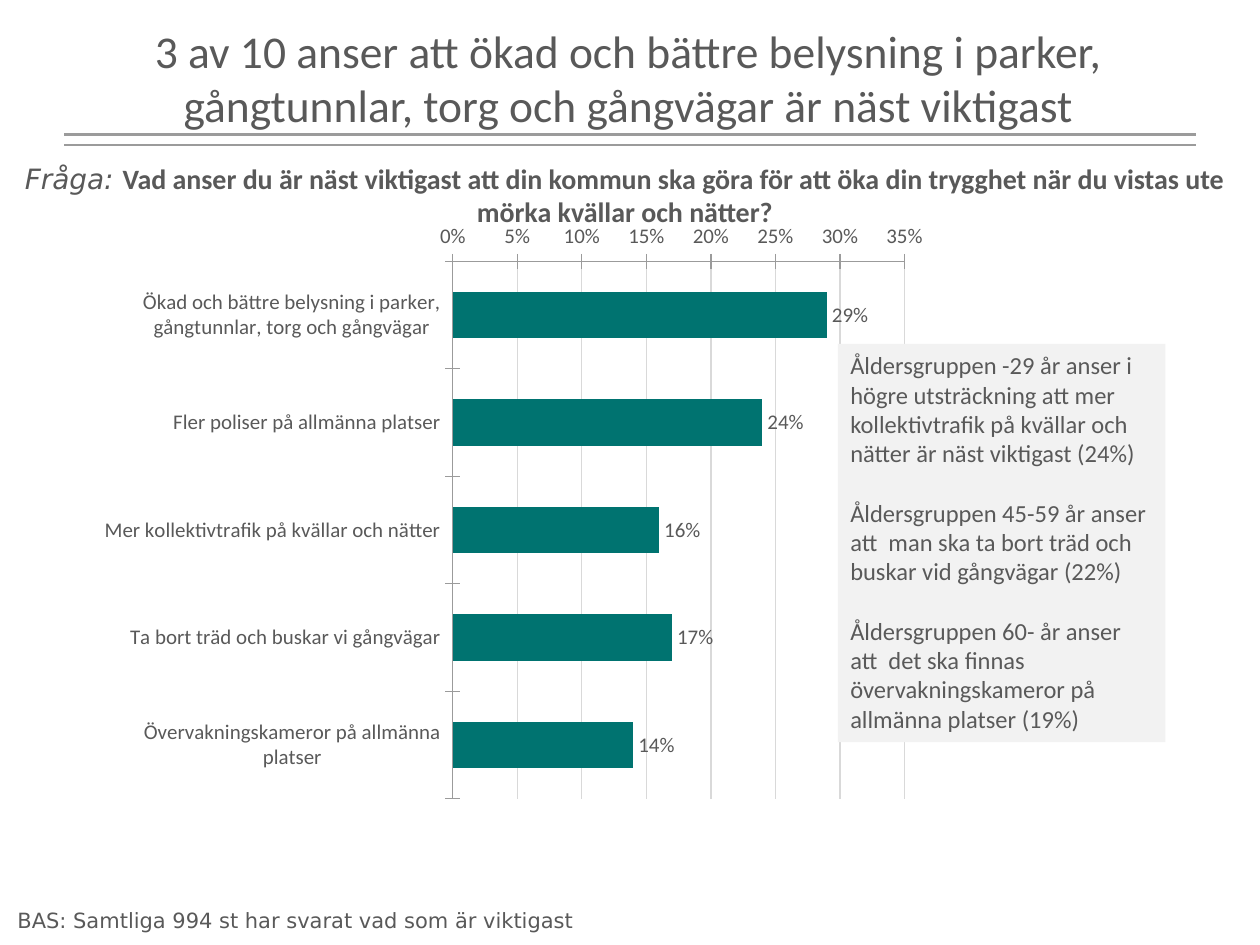
from lxml import etree
from pptx import Presentation
from pptx.chart.data import CategoryChartData
from pptx.dml.color import RGBColor
from pptx.enum.chart import XL_AXIS_CROSSES, XL_CHART_TYPE, XL_LABEL_POSITION, XL_TICK_MARK
from pptx.enum.shapes import MSO_CONNECTOR, MSO_SHAPE
from pptx.enum.text import MSO_ANCHOR, PP_ALIGN
from pptx.oxml import parse_xml
from pptx.oxml.ns import nsdecls, qn
from pptx.util import Inches, Pt

BAR = XL_CHART_TYPE.BAR_CLUSTERED
END = XL_LABEL_POSITION.OUTSIDE_END
CROSS = XL_TICK_MARK.CROSS
LAST = XL_AXIS_CROSSES.MAXIMUM
MID, LEFT = PP_ALIGN.CENTER, PP_ALIGN.LEFT
TOP = MSO_ANCHOR.TOP
INK, RULE, GRID, TEAL, PALE = "595959", "9B9B9B", "D9D9D9", "007370", "F2F2F2"
SANS, WIDE = "Calibri", "DejaVu Sans"

TITLE = ("3 av 10 anser att ökad och bättre belysning i parker, "
         "gångtunnlar, torg och gångvägar är näst viktigast")
ASK = "Fråga: "
QUERY = ("Vad anser du är näst viktigast att din kommun ska göra för att öka "
         "din trygghet när du vistas ute mörka kvällar och nätter?")
BASE = "BAS: Samtliga 994 st har svarat vad som är viktigast"
NOTES = [
    "Åldersgruppen -29 år anser i högre utsträckning att mer kollektivtrafik "
    "på kvällar och nätter är näst viktigast (24%)",
    "Åldersgruppen 45-59 år anser att  man ska ta bort träd och buskar vid gångvägar (22%)",
    "Åldersgruppen 60- år anser att  det ska finnas övervakningskameror "
    "på allmänna platser (19%)",
]
BARS = [
    ("Ökad och bättre belysning i parker, gångtunnlar, torg och gångvägar", 0.29),
    ("Fler poliser på allmänna platser", 0.24),
    ("Mer kollektivtrafik på kvällar och nätter", 0.16),
    ("Ta bort träd och buskar vi gångvägar", 0.17),
    ("Övervakningskameror på allmänna platser", 0.14),
]
PLOT = {"x": 0.33, "y": 0.05, "w": 0.43, "h": 0.84}


def tint(hue):
    """Turn a hex string into a colour."""
    return RGBColor.from_string(hue)


def box(*sides):
    """Turn inches into lengths."""
    return [Inches(side) for side in sides]


def style(font, **form):
    """Set the font attributes given in form."""
    font.color.rgb = tint(INK)
    for key, val in form.items():
        setattr(font, key, val)


def write(shape, paras, align, gap=0):
    """Fill a shape with paragraphs made of (text, format) runs."""
    frame = shape.text_frame
    frame.word_wrap, frame.vertical_anchor = True, TOP
    for i, runs in enumerate(paras):
        para = frame.add_paragraph() if i else frame.paragraphs[0]
        para.alignment = align
        if i:
            para.space_before = Pt(gap)
        for text, form in runs:
            run = para.add_run()
            run.text = text
            style(run.font, **form)


def stroke(line, hue, width):
    """Colour and size a line."""
    line.color.rgb = tint(hue)
    line.width = Pt(width)


def draw_rule(slide, y):
    """Draw one line across the slide under the title."""
    rule = slide.shapes.add_connector(MSO_CONNECTOR.STRAIGHT, *box(0.51, y, 9.49, y))
    stroke(rule.line, RULE, 1.5)
    etree.SubElement(rule._element.spPr, qn("a:effectLst"))


def draw_chart(slide):
    """Add the bar chart of answers."""
    data = CategoryChartData(number_format="0%")
    data.categories = [name for name, _ in BARS]
    data.add_series("Series 1", [val for _, val in BARS])
    chart = slide.shapes.add_chart(BAR, *box(0.83, 1.78, 8.35, 5.12), data).chart
    chart.has_legend = chart.has_title = False
    style(chart.font, name=SANS, size=Pt(18))

    cats, vals = chart.category_axis, chart.value_axis
    for axis in (cats, vals):
        axis.major_tick_mark = CROSS
        style(axis.tick_labels.font, name=SANS, size=Pt(12))
        stroke(axis.format.line, RULE, 0.75)
    cats.reverse_order, cats.crosses = True, LAST
    vals.minimum_scale, vals.maximum_scale, vals.major_unit = 0, 0.35, 0.05
    vals.tick_labels.number_format = "0%"
    vals.tick_labels.number_format_is_linked = False
    stroke(vals.major_gridlines.format.line, GRID, 0.75)

    plot = chart.plots[0]
    plot.gap_width, plot.vary_by_categories = 130, False
    fill = plot.series[0].format.fill
    fill.solid()
    fill.fore_color.rgb = tint(TEAL)
    plot.has_data_labels = True
    tags = plot.data_labels
    form = {"show_value": True, "position": END, "number_format": "0%",
            "number_format_is_linked": False}
    for key, val in form.items():
        setattr(tags, key, val)
    style(tags.font, name=SANS, size=Pt(12))

    modes = '<c:xMode val="edge"/><c:yMode val="edge"/>'
    spots = "".join(f'<c:{key} val="{val}"/>' for key, val in PLOT.items())
    area = chart._chartSpace.chart.plotArea
    for old in area.findall(qn("c:layout")):
        area.remove(old)
    area.insert(0, parse_xml(
        f'<c:layout {nsdecls("c")}><c:manualLayout><c:layoutTarget val="inner"/>'
        f"{modes}{spots}</c:manualLayout></c:layout>"))


def main():
    """Build the slide and save it."""
    deck = Presentation()
    deck.slide_width, deck.slide_height = box(10, 7.5)
    slide = deck.slides.add_slide(deck.slide_layouts[5])
    shapes = slide.shapes

    for y in (1.07, 1.15):
        draw_rule(slide, y)
    title = shapes.title
    title.left, title.top, title.width, title.height = box(0.49, 0.13, 9, 1.25)
    write(title, [[(TITLE, {"name": SANS, "size": Pt(26)})]], MID)

    query = shapes.add_textbox(*box(-0.04, 1.23, 10, 0.64))
    write(query, [[(ASK, {"name": WIDE, "size": Pt(16), "italic": True}),
                   (QUERY, {"name": SANS, "size": Pt(16), "bold": True})]], MID)
    base = shapes.add_textbox(*box(0.04, 7.15, 8.98, 0.3))
    write(base, [[(BASE, {"name": WIDE, "size": Pt(12)})]], LEFT)
    draw_chart(slide)

    panel = shapes.add_shape(MSO_SHAPE.RECTANGLE, *box(6.65, 2.73, 2.6, 3.16))
    panel.shadow.inherit = False
    panel.fill.solid()
    panel.fill.fore_color.rgb = tint(PALE)
    panel.line.fill.background()
    form = {"name": SANS, "size": Pt(14)}
    write(panel, [[(note, form)] for note in NOTES], LEFT, 17)
    deck.save("out.pptx")


if __name__ == "__main__":
    main()
